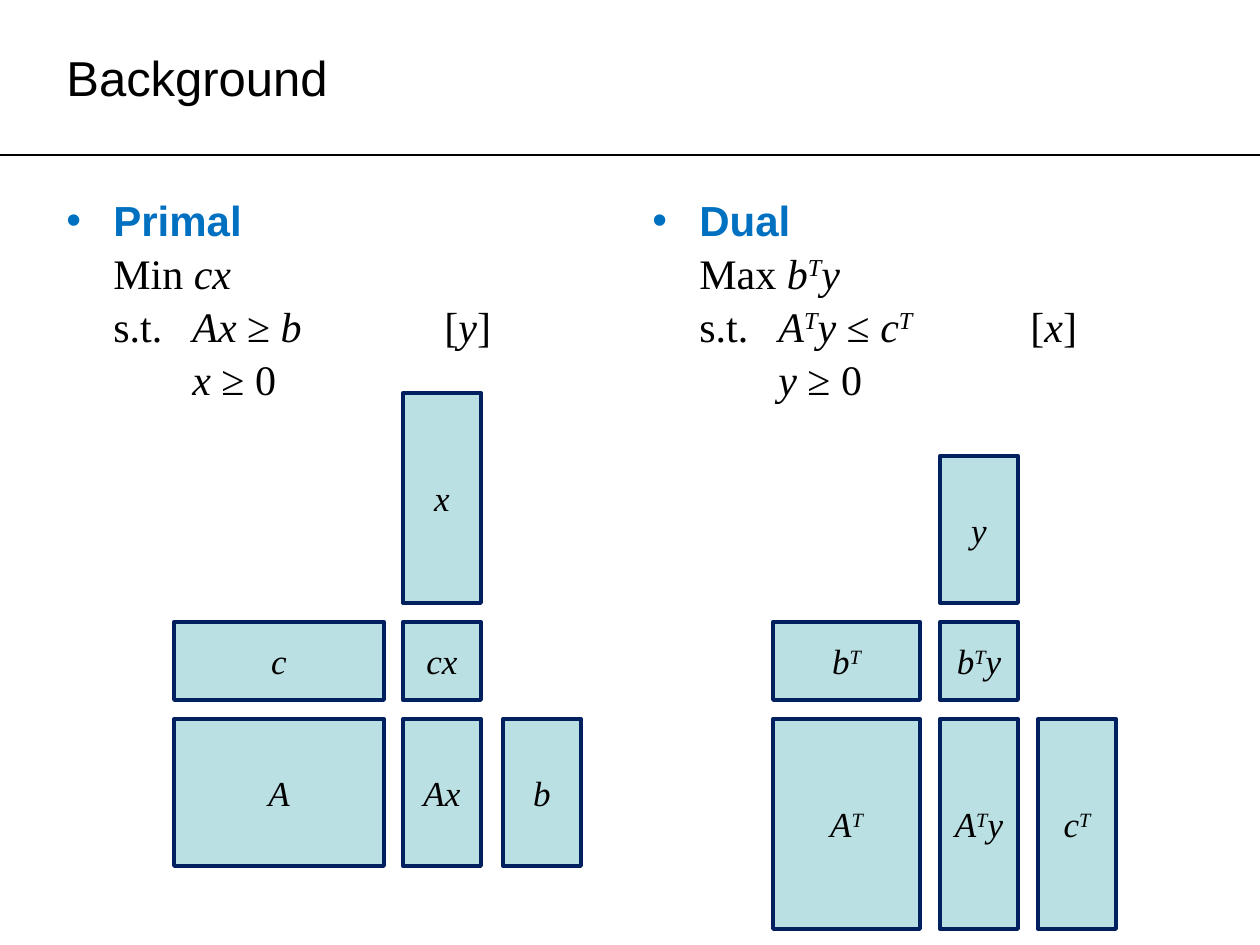
from pptx import Presentation
from pptx import util as u
from pptx.dml.color import RGBColor
from pptx.enum import shapes, text
from pptx.oxml.ns import qn
from lxml import etree

PX = u.Inches(1) / 126
BLACK = RGBColor(0x00, 0x00, 0x00)
BLUE = RGBColor(0x00, 0x70, 0xC0)
NAVY = RGBColor(0x00, 0x20, 0x60)
TEAL = RGBColor(0xBB, 0xE0, 0xE3)
SANS, SERIF = "Arial", "Times New Roman"
LONG, SHORT, UNIT, GAP = 210, 147, 78, 19   # block sizes
MID, LOW = 622, 719                         # tops of the two lower rows

PRIMAL = "Min *cx*\ns.t.\t*Ax* ≥ *b*\t\t[*y*]\n\t*x* ≥ 0"
DUAL = "Max *b^T^y*\ns.t.\t*A^T^y* ≤ *c^T*\t[*x*]\n\t*y* ≥ 0"


def px(n):
    return u.Emu(round(n * PX))


def write(para, words, size=20, face=SERIF, color=BLACK, bold=False):
    """Add runs: *...* is italic, ^...^ is superscript, newline is a break."""
    for row, line in enumerate(words.split("\n")):
        if row:
            para.add_line_break()
        for i, part in enumerate(line.split("*")):
            for j, bit in enumerate(part.split("^")):
                if not bit:
                    continue
                run = para.add_run()
                run.text = bit
                font = run.font
                font.size, font.name = u.Pt(size), face
                font.bold, font.italic = bold, i % 2 == 1
                font.color.rgb = color
                if j % 2:
                    font._element.set("baseline", "30000")


def area(slide, x, y, w, h):
    frame = slide.shapes.add_textbox(px(x), px(y), px(w), px(h)).text_frame
    frame.word_wrap = True
    return frame


def bullet(para):
    props = para._p.get_or_add_pPr()
    props.set("marL", str(px(47)))
    props.set("indent", str(-px(47)))
    props.set("defTabSz", str(u.Inches(1)))
    etree.SubElement(props, qn("a:buFont"), typeface=SANS)
    etree.SubElement(props, qn("a:buChar"), char="•")
    tabs = etree.SubElement(props, qn("a:tabLst"))
    for n in (1, 2, 3):
        etree.SubElement(tabs, qn("a:tab"), pos=str(u.Inches(n)), algn="l")


def model(slide, x, head, body):
    para = area(slide, x, 186, 564, 679).paragraphs[0]
    bullet(para)
    para.line_spacing = 1.05
    write(para, head + "\n", 24, SANS, BLUE, True)
    write(para, body, 24)


def block(slide, x, y, w, h, words):
    box = slide.shapes.add_shape(shapes.MSO_SHAPE.RECTANGLE,
                                 px(x), px(y), px(w), px(h))
    box.shadow.inherit = False
    box.fill.solid()
    box.fill.fore_color.rgb = TEAL
    box.line.color.rgb = NAVY
    box.line.width = u.Pt(2.25)
    frame = box.text_frame
    frame.vertical_anchor = text.MSO_ANCHOR.MIDDLE
    para = frame.paragraphs[0]
    para.alignment = text.PP_ALIGN.CENTER
    write(para, words)


def matrix(slide, cols, wide, tall, words):
    """Blocks of one product: vector on top, cost row, constraint row."""
    left, mid, right = cols
    top, cost, value, coef, prod, bound = words
    block(slide, left, MID, wide, UNIT, cost)
    block(slide, mid, MID, UNIT, UNIT, value)
    block(slide, left, LOW, wide, tall, coef)
    block(slide, mid, LOW, UNIT, tall, prod)
    block(slide, right, LOW, UNIT, tall, bound)
    block(slide, mid, MID - GAP - wide, UNIT, wide, top)


def rule(slide, x, y, end):
    line = slide.shapes.add_connector(shapes.MSO_CONNECTOR.STRAIGHT,
                                      px(x), px(y), px(end), px(y))
    line.line.color.rgb = BLACK
    line.line.width = u.Pt(0.75)
    etree.SubElement(line._element.spPr, qn("a:effectLst"))


def main():
    deck = Presentation()
    deck.slide_width, deck.slide_height = px(1260), px(945)
    slide = deck.slides.add_slide(deck.slide_layouts[6])

    # Title and rule
    rule(slide, -1, 155, 1260)
    title = area(slide, 54, 9, 1152, 136)
    title.vertical_anchor = text.MSO_ANCHOR.MIDDLE
    write(title.paragraphs[0], "Background", 28, SANS)

    # The two problems
    model(slide, 54, "Primal", PRIMAL)
    model(slide, 640, "Dual", DUAL)

    # Block diagrams
    matrix(slide, (174, 403, 503), LONG, SHORT,
           ("*x*", "*c*", "*cx*", "*A*", "*Ax*", "*b*"))
    matrix(slide, (773, 940, 1038), SHORT, LONG,
           ("*y*", "*b^T*", "*b^T^y*", "*A^T*", "*A^T^y*", "*c^T*"))

    deck.save("out.pptx")


if __name__ == "__main__":
    main()
